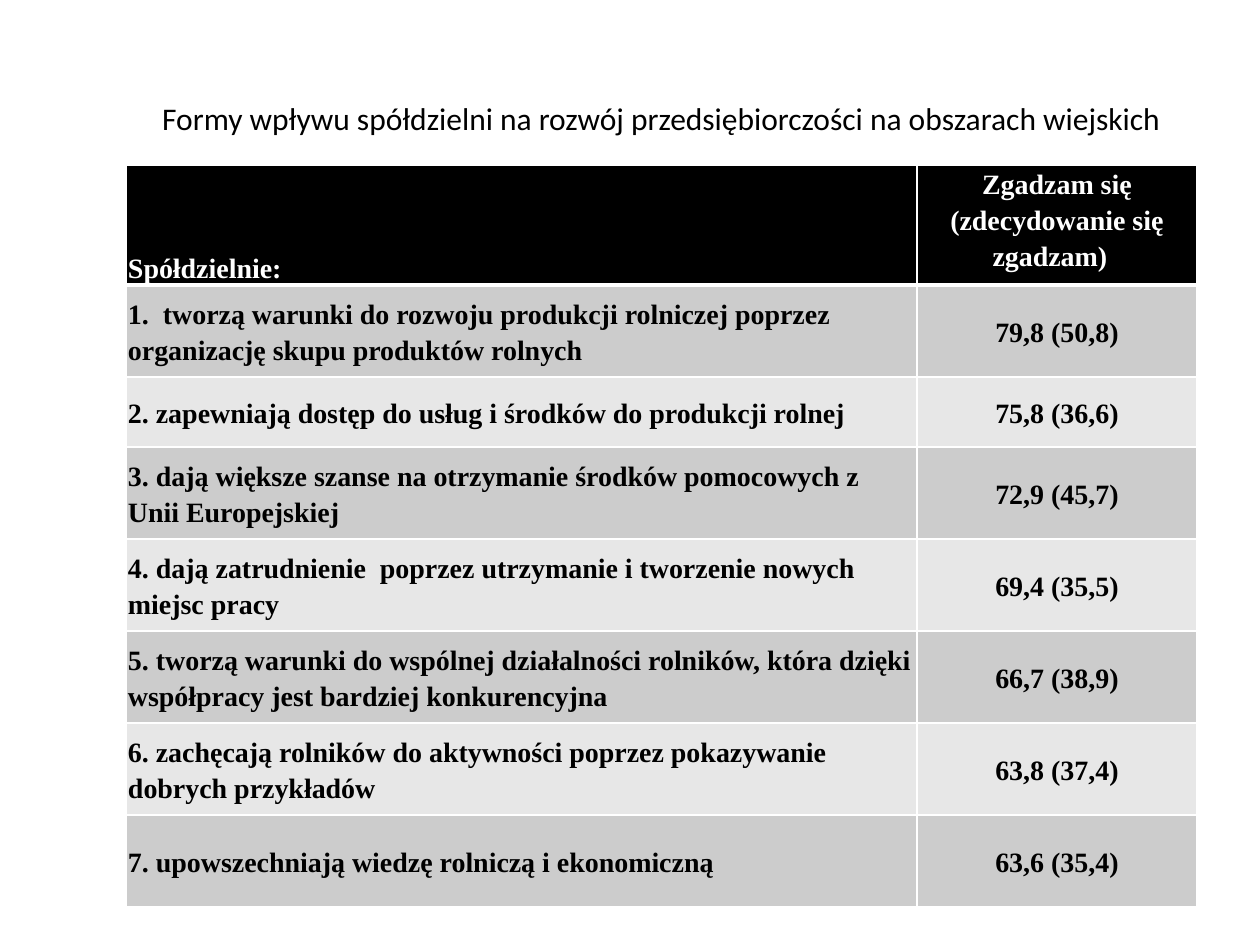
"""Build a slide with a table of the ways cooperatives support rural enterprise."""
from typing import NamedTuple

from lxml import etree
from pptx import Presentation
from pptx.dml.color import RGBColor
from pptx.enum.text import MSO_ANCHOR, PP_ALIGN
from pptx.oxml.ns import qn
from pptx.util import Emu, Pt

PIXELS_PER_INCH = 126
EMU_PER_INCH = 914400
LEFT, CENTER = PP_ALIGN.LEFT, PP_ALIGN.CENTER
TOP, MIDDLE, BOTTOM = MSO_ANCHOR.TOP, MSO_ANCHOR.MIDDLE, MSO_ANCHOR.BOTTOM
BLACK, WHITE = "000000", "FFFFFF"
BANDS = ("CCCCCC", "E7E7E7")
COLUMN_WIDTHS = (791, 280)
HEADER_HEIGHT = 120
TITLE = "Formy wpływu spółdzielni na rozwój przedsiębiorczości na obszarach wiejskich"


class Statement(NamedTuple):
    text: str
    share: str
    height: int = 92


class CellStyle(NamedTuple):
    fill: str
    color: str
    align: PP_ALIGN
    anchor: MSO_ANCHOR
    bottom_border: int = 1


STATEMENTS = (
    Statement("1.  tworzą warunki do rozwoju produkcji rolniczej poprzez "
              "organizację skupu produktów rolnych", "79,8 (50,8)"),
    Statement("2. zapewniają dostęp do usług i środków do produkcji rolnej",
              "75,8 (36,6)", 70),
    Statement("3. dają większe szanse na otrzymanie środków pomocowych z "
              "Unii Europejskiej", "72,9 (45,7)"),
    Statement("4. dają zatrudnienie  poprzez utrzymanie i tworzenie nowych "
              "miejsc pracy", "69,4 (35,5)"),
    Statement("5. tworzą warunki do wspólnej działalności rolników, która dzięki "
              "współpracy jest bardziej konkurencyjna", "66,7 (38,9)"),
    Statement("6. zachęcają rolników do aktywności poprzez pokazywanie "
              "dobrych przykładów", "63,8 (37,4)"),
    Statement("7. upowszechniają wiedzę rolniczą i ekonomiczną", "63,6 (35,4)"),
)


def px(length: int) -> Emu:
    return Emu(round(length * EMU_PER_INCH / PIXELS_PER_INCH))


def rgb(color: str) -> RGBColor:
    return RGBColor.from_string(color)


def set_font(para, name: str, size: int, color: str, bold: bool = False) -> None:
    para.font.name = name
    para.font.size = Pt(size)
    para.font.bold = bold
    para.font.color.rgb = rgb(color)


def add_borders(cell, bottom_width: int) -> None:
    properties = cell._tc.get_or_add_tcPr()
    widths = {"a:lnL": 1, "a:lnR": 1, "a:lnT": 1, "a:lnB": bottom_width}
    for position, (tag, width) in enumerate(widths.items()):
        line = etree.Element(qn(tag), w=str(Pt(width)))
        fill = etree.SubElement(line, qn("a:solidFill"))
        etree.SubElement(fill, qn("a:srgbClr"), val=WHITE)
        properties.insert(position, line)


def fill_cell(cell, text: str, style: CellStyle) -> None:
    cell.text = text
    cell.vertical_anchor = style.anchor
    cell.margin_left = cell.margin_right = px(2)
    cell.margin_top = cell.margin_bottom = 0
    cell.fill.solid()
    cell.fill.fore_color.rgb = rgb(style.fill)
    para = cell.text_frame.paragraphs[0]
    para.alignment = style.align
    para.line_spacing = 1.15
    set_font(para, "Times New Roman", 16, style.color, bold=True)
    add_borders(cell, style.bottom_border)


def add_title(page) -> None:
    box = page.shapes.add_textbox(px(126), px(71), px(1071), px(94))
    frame = box.text_frame
    frame.word_wrap = True
    frame.vertical_anchor = MIDDLE
    para = frame.paragraphs[0]
    para.text = TITLE
    para.alignment = CENTER
    set_font(para, "Calibri", 18, BLACK)


def add_statement_table(page) -> None:
    heights = [HEADER_HEIGHT] + [statement.height for statement in STATEMENTS]
    table = page.shapes.add_table(
        len(heights), len(COLUMN_WIDTHS), px(126), px(165),
        px(sum(COLUMN_WIDTHS)), px(sum(heights))).table
    for column, width in zip(table.columns, COLUMN_WIDTHS):
        column.width = px(width)
    for row, height in zip(table.rows, heights):
        row.height = px(height)
    fill_cell(table.cell(0, 0), "Spółdzielnie:",
              CellStyle(BLACK, WHITE, LEFT, BOTTOM, 3))
    fill_cell(table.cell(0, 1), "Zgadzam się (zdecydowanie się zgadzam)  ",
              CellStyle(BLACK, WHITE, CENTER, TOP, 3))
    for index, statement in enumerate(STATEMENTS):
        band = BANDS[index % len(BANDS)]
        fill_cell(table.cell(index + 1, 0), statement.text,
                  CellStyle(band, BLACK, LEFT, MIDDLE))
        fill_cell(table.cell(index + 1, 1), statement.share,
                  CellStyle(band, BLACK, CENTER, MIDDLE))


def main() -> None:
    deck = Presentation()
    deck.slide_width, deck.slide_height = px(1260), px(945)
    page = deck.slides.add_slide(deck.slide_layouts[6])
    add_title(page)
    add_statement_table(page)
    deck.save("out.pptx")


if __name__ == "__main__":
    main()
